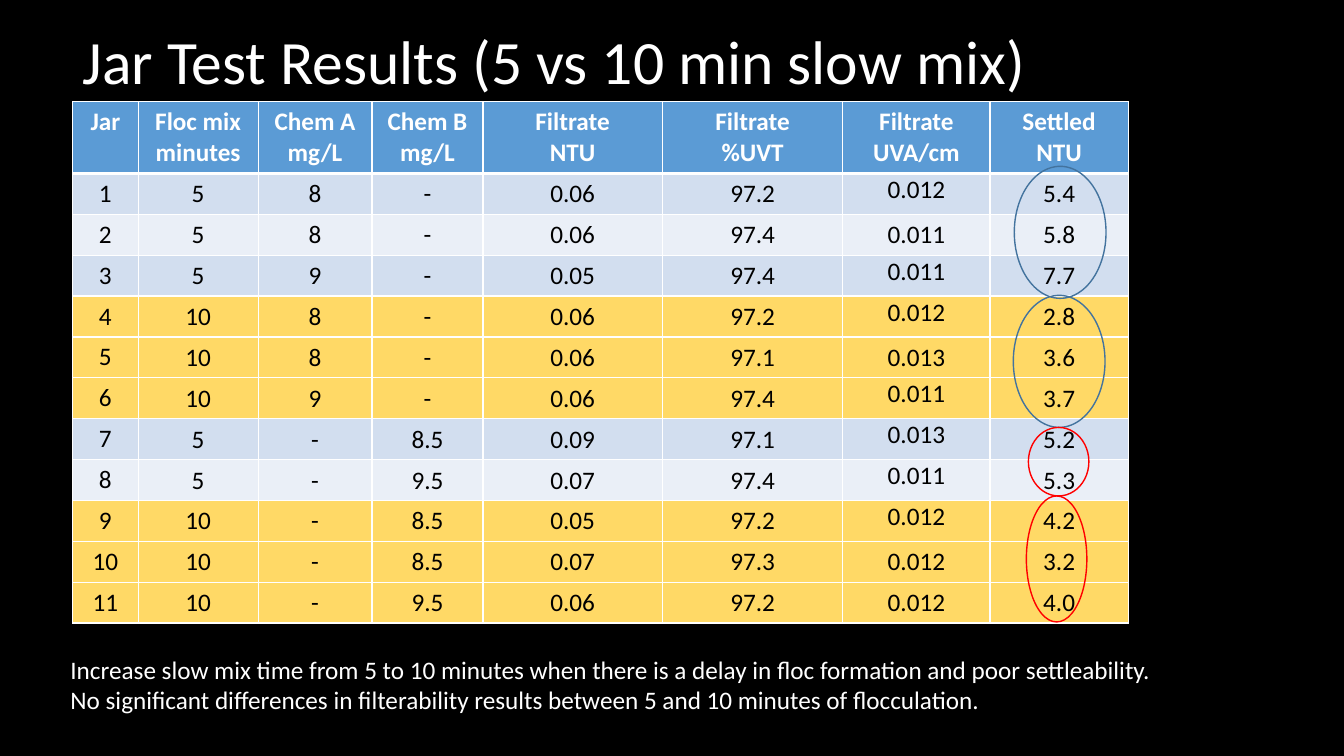
from pptx import Presentation
from pptx.dml.color import RGBColor
from pptx.enum.shapes import MSO_SHAPE as Shape
from pptx.enum.text import MSO_ANCHOR as Anchor, PP_ALIGN as Align
from pptx.oxml.xmlchemy import OxmlElement as Element
from pptx.util import Inches, Pt

# Content
TITLE = "Jar Test Results (5 vs 10 min slow mix)"
HEADS = ["Jar", "Floc mix\nminutes", "Chem A\nmg/L", "Chem B\nmg/L",
         "Filtrate\nNTU", "Filtrate\n%UVT", "Filtrate\nUVA/cm", "Settled\nNTU"]
JARS = [
    ("1", "5", "8", "-", "0.06", "97.2", "0.012", "5.4"),
    ("2", "5", "8", "-", "0.06", "97.4", "0.011", "5.8"),
    ("3", "5", "9", "-", "0.05", "97.4", "0.011", "7.7"),
    ("4", "10", "8", "-", "0.06", "97.2", "0.012", "2.8"),
    ("5", "10", "8", "-", "0.06", "97.1", "0.013", "3.6"),
    ("6", "10", "9", "-", "0.06", "97.4", "0.011", "3.7"),
    ("7", "5", "-", "8.5", "0.09", "97.1", "0.013", "5.2"),
    ("8", "5", "-", "9.5", "0.07", "97.4", "0.011", "5.3"),
    ("9", "10", "-", "8.5", "0.05", "97.2", "0.012", "4.2"),
    ("10", "10", "-", "8.5", "0.07", "97.3", "0.012", "3.2"),
    ("11", "10", "-", "9.5", "0.06", "97.2", "0.012", "4.0"),
]
NOTES = [
    "Increase slow mix time from 5 to 10 minutes when there is a delay in floc "
    "formation and poor settleability.",
    "No significant differences in filterability results between 5 and 10 "
    "minutes of flocculation.",
]

# Colours
BLACK = RGBColor(0, 0, 0)
WHITE = RGBColor(255, 255, 255)
HEADER = RGBColor(0x5B, 0x9B, 0xD5)
BANDS = [RGBColor(0xD2, 0xDE, 0xEF), RGBColor(0xEA, 0xEF, 0xF7)]
GOLD = RGBColor(0xFF, 0xD9, 0x66)
BLUE = RGBColor(0x43, 0x73, 0x9E)
RED = RGBColor(255, 0, 0)

# Layout, in inches
WIDTHS = [0.65, 1.19, 1.13, 1.1, 1.78, 1.79, 1.46, 1.37]
LEFT, TOP, HEAD_H, TABLE_H = 0.72, 1.01, 0.7, 5.16
ROW_H = (TABLE_H - HEAD_H) / len(JARS)
UVA = 6
MIDDLE_UVA = ("2", "5", "10", "11")
RINGS = [
    (10.06, 1.65, 0.91, 1.31, BLUE),
    (10.05, 2.93, 0.91, 1.31, BLUE),
    (10.2, 4.24, 0.6, 0.68, RED),
    (10.18, 4.92, 0.6, 1.25, RED),
]


def style(frame, size, color, bold=False, align=Align.LEFT):
    for para in frame.paragraphs:
        para.alignment = align
        for run in para.runs:
            font = run.font
            font.name, font.size, font.bold = "Calibri", Pt(size), bold
            font.color.rgb = color


def border(cell, side, width):
    line = Element(f"a:ln{side}")
    line.set("w", str(Pt(width)))
    fill, color = Element("a:solidFill"), Element("a:srgbClr")
    color.set("val", str(WHITE))
    fill.append(color)
    line.append(fill)
    cell._tc.get_or_add_tcPr().append(line)


def fill_cell(cell, text, back, color, head):
    cell.text_frame.text = text
    style(cell.text_frame, 18, color, head, Align.CENTER)
    for side in "LRTB":
        border(cell, side, 3 if head and side == "B" else 1)
    cell.fill.solid()
    cell.fill.fore_color.rgb = back


def jar_color(row, jar):
    return GOLD if jar[1] == "10" else BANDS[row % 2]


def add_title(slide):
    title = slide.shapes.title
    title.left, title.top = Inches(LEFT), Inches(0.15)
    title.width, title.height = Inches(12.42), Inches(0.99)
    frame = title.text_frame
    frame.text = TITLE
    frame.vertical_anchor = Anchor.MIDDLE
    frame.paragraphs[0].line_spacing = 0.9
    style(frame, 44, WHITE)


def add_results(slide):
    table = slide.shapes.add_table(
        len(JARS) + 1, len(HEADS), Inches(LEFT), Inches(TOP),
        Inches(sum(WIDTHS)), Inches(TABLE_H)).table
    for col, width in zip(table.columns, WIDTHS):
        col.width = Inches(width)
    for row in table.rows:
        row.height = Inches(ROW_H)
    table.rows[0].height = Inches(HEAD_H)

    for col, head in enumerate(HEADS):
        fill_cell(table.cell(0, col), head, HEADER, WHITE, True)
    for row, jar in enumerate(JARS):
        for col, value in enumerate(jar):
            cell = table.cell(row + 1, col)
            fill_cell(cell, value, jar_color(row, jar), BLACK, False)
            if col == 0:
                continue
            cell.margin_left = cell.margin_right = cell.margin_top = Inches(0.01)
            cell.margin_bottom = 0
            if col != UVA or jar[0] in MIDDLE_UVA:
                cell.vertical_anchor = Anchor.MIDDLE


def add_rings(slide):
    for *box, color in RINGS:
        ring = slide.shapes.add_shape(Shape.OVAL, *map(Inches, box))
        ring.shadow.inherit = False
        ring.fill.background()
        ring.line.color.rgb = color
        ring.line.width = Pt(1)


def add_notes(slide):
    box = slide.shapes.add_textbox(
        Inches(0.6), Inches(6.44), Inches(11.05), Inches(0.71))
    frame = box.text_frame
    frame.word_wrap = False
    frame.text = "\n".join(NOTES)
    style(frame, 18, WHITE)


def main():
    deck = Presentation()
    deck.slide_width, deck.slide_height = Inches(13.33), Inches(7.5)
    slide = deck.slides.add_slide(deck.slide_layouts[5])
    slide.background.fill.solid()
    slide.background.fill.fore_color.rgb = BLACK
    add_title(slide)
    add_results(slide)
    add_rings(slide)
    add_notes(slide)
    deck.save("out.pptx")


if __name__ == "__main__":
    main()
